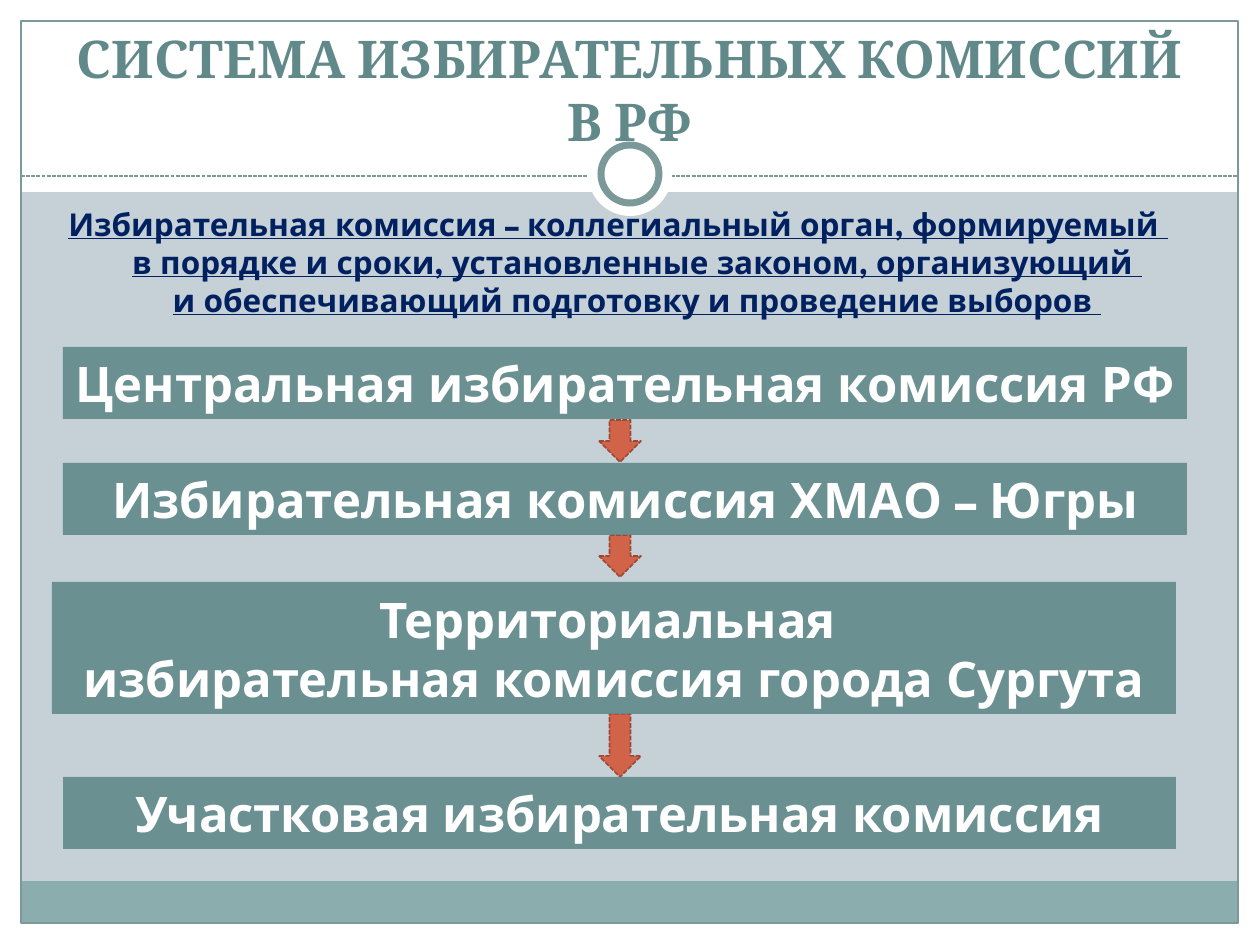
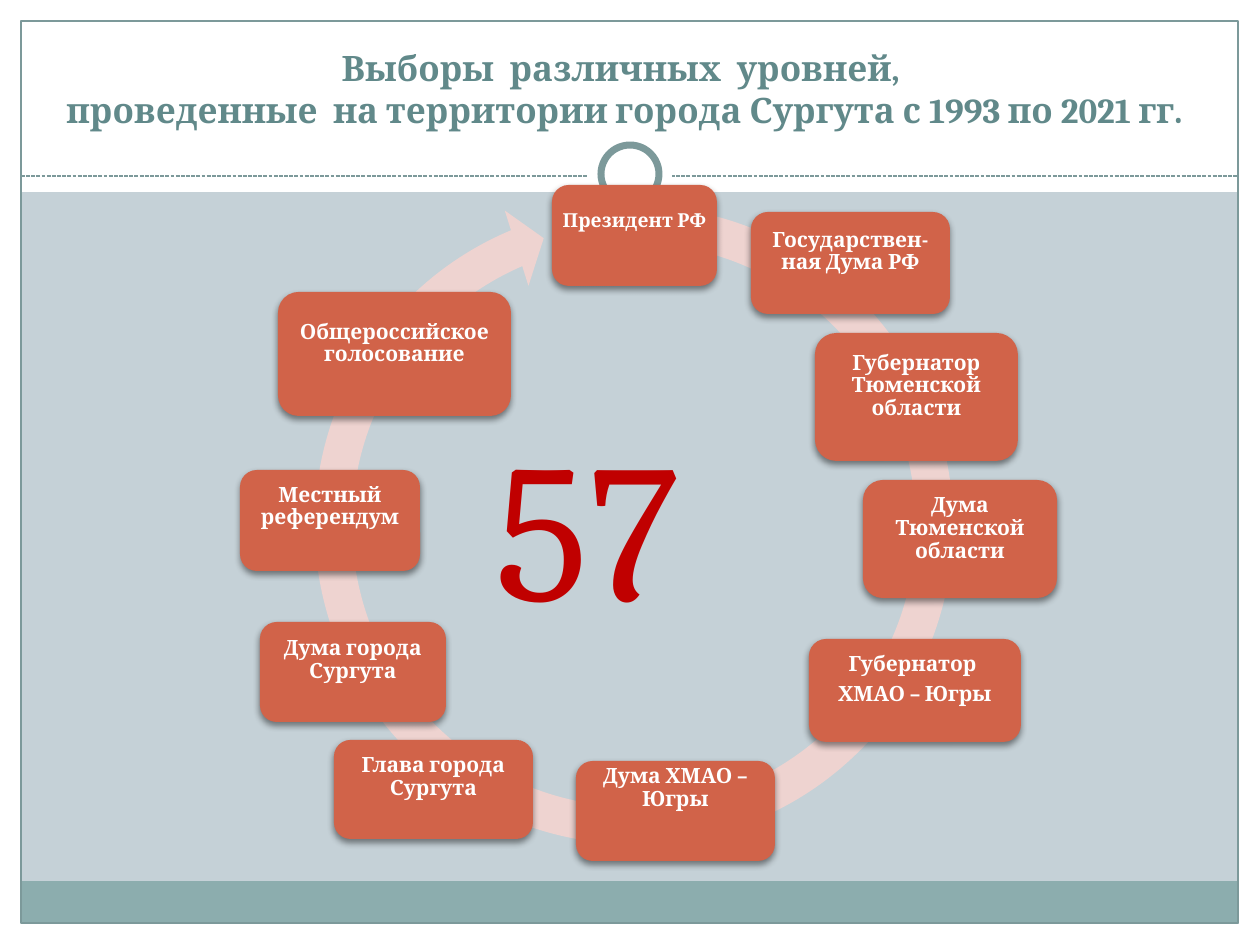
from lxml import etree
from pptx import Presentation
from pptx import util as u
from pptx.dml.color import RGBColor
from pptx.enum import dml, shapes, text
from pptx.oxml.ns import qn

SCALE = 914400 / 126  # EMU in one px
COLOURS = {
    "page": "C5D1D7", "white": "FFFFFF", "band": "8CADAE", "frame": "7C999A",
    "teal": "61898A", "navy": "002060", "rust": "D16349", "rust_edge": "9B4936",
    "ring": "EED3D0", "red": "C00000", "black": "000000",
}
SERIF, SANS = "Cambria", "League Spartan"
KIND = shapes.MSO_SHAPE
CENTRE = text.PP_ALIGN.CENTER


def px(length):
    return u.Emu(round(length * SCALE))


def rgb(name):
    return RGBColor.from_string(COLOURS[name])


def sub(parent, tag, **attributes):
    return etree.SubElement(parent, qn(tag), attributes)


class Deck:
    def __init__(self):
        self.prs = Presentation()
        self.prs.slide_width, self.prs.slide_height = px(1260), px(945)
        self.slide = None

    def new_slide(self, layout):
        self.slide = self.prs.slides.add_slide(self.prs.slide_layouts[layout])

    def shape(self, kind, box, fill=None, line=None, width=0.75, dashed=False):
        item = self.slide.shapes.add_shape(kind, *map(px, box))
        item.shadow.inherit = False
        if fill:
            item.fill.solid()
            item.fill.fore_color.rgb = rgb(fill)
        else:
            item.fill.background()
        if line:
            self.stroke(item.line, line, width, dashed)
        else:
            item.line.fill.background()
        return item

    def stroke(self, line, colour, width, dashed):
        line.color.rgb = rgb(colour)
        line.width = u.Pt(width)
        if dashed:
            line.dash_style = dml.MSO_LINE.SQUARE_DOT

    def rule(self, x1, x2, y, colour):
        line = self.slide.shapes.add_connector(
            shapes.MSO_CONNECTOR.STRAIGHT, px(x1), px(y), px(x2), px(y))
        self.stroke(line.line, colour, 0.75, True)
        sub(line._element.spPr, "a:effectLst")

    def add_words(self, paragraph, lines, size, font, colour, bold=True,
                  underline=None, align=CENTRE):
        paragraph.alignment = align
        for number, line in enumerate(lines.split("\n")):
            if number:
                paragraph.add_line_break()
            run = paragraph.add_run()
            run.text = line
            run.font.size, run.font.name = u.Pt(size), font
            run.font.bold, run.font.underline = bold, underline
            run.font.color.rgb = rgb(colour)

    def place(self, holder, box):
        holder.left, holder.top, holder.width, holder.height = map(px, box)
        holder.text_frame.auto_size = text.MSO_AUTO_SIZE.NONE
        return holder.text_frame

    def title(self, box, words, size):
        frame = self.place(self.slide.shapes.title, box)
        frame.vertical_anchor = text.MSO_ANCHOR.BOTTOM
        self.add_words(frame.paragraphs[0], words, size, SERIF, "teal")

    def definition(self, box, words):
        """Fill the body placeholder with one underlined, unbulleted paragraph."""
        paragraph = self.place(self.slide.placeholders[1], box).paragraphs[0]
        paragraph.space_before = u.Pt(3.6)
        self.add_words(paragraph, words, 18, SANS, "navy", underline=True)
        properties = paragraph._p.get_or_add_pPr()
        properties.set("marL", str(px(38)))
        properties.set("indent", str(px(-38)))
        sub(properties, "a:buNone")

    def level(self, box, words):
        """Draw one level of the hierarchy as a slightly transparent bar."""
        bar = self.shape(KIND.RECTANGLE, box, "teal")
        colour = bar._element.spPr.find(qn("a:solidFill"))[0]
        sub(colour, "a:alpha", val="90000")
        self.add_words(bar.text_frame.paragraphs[0], words, 28, SANS, "white")

    def card(self, box, drop, words, size=12):
        """Draw a shadowed card whose words start drop px below its top."""
        card = self.shape(KIND.ROUNDED_RECTANGLE, box, "rust")
        effects = card._element.spPr.find(qn("a:effectLst"))
        shadow = sub(effects, "a:outerShdw", blurRad=str(u.Pt(4)),
                     dist=str(u.Pt(2)), dir="5400000", rotWithShape="0")
        sub(sub(shadow, "a:srgbClr", val=COLOURS["black"]), "a:alpha", val="45000")
        frame = card.text_frame
        frame.vertical_anchor = text.MSO_ANCHOR.TOP
        frame.margin_left = frame.margin_right = px(5)
        frame.margin_top, frame.margin_bottom = px(max(drop - 5, 0)), 0
        for number, part in enumerate(words):
            paragraph = frame.add_paragraph() if number else frame.paragraphs[0]
            paragraph.line_spacing, paragraph.space_after = 0.9, u.Pt(4.2)
            self.add_words(paragraph, part, size, SERIF, "white")

    def label(self, box, words, size, colour):
        frame = self.slide.shapes.add_textbox(*map(px, box)).text_frame
        frame.word_wrap = True
        self.add_words(frame.paragraphs[0], words, size, SERIF, colour,
                       bold=False, align=text.PP_ALIGN.LEFT)

    def master_frame(self):
        """Draw the common frame on the current slide, then move it to the master."""
        master = self.prs.slide_master
        master.background.fill.solid()
        master.background.fill.fore_color.rgb = rgb("page")
        before = len(self.slide.shapes)
        for box in ((0, 924, 1260, 21), (0, 0, 1260, 192),
                    (0, 0, 21, 945), (1239, 0, 21, 945)):
            self.shape(KIND.RECTANGLE, box, "white")
        self.shape(KIND.RECTANGLE, (21, 881, 1217, 43), "band")
        self.shape(KIND.RECTANGLE, (21, 21, 1217, 902), line="frame")
        self.rule(21, 1239, 176, "frame")
        self.shape(KIND.OVAL, (588, 132, 84, 84), "white")
        self.shape(KIND.OVAL, (601, 145, 58, 58), "white", "frame", 4)
        tree = master.shapes._spTree
        for number, item in enumerate(list(self.slide.shapes)[before:]):
            item._element.xpath(".//p:cNvPr")[0].set("id", str(100 + number))
            tree.insert(2 + number, item._element)


def commissions(deck):
    deck.title((42, 42, 1176, 116), "СИСТЕМА ИЗБИРАТЕЛЬНЫХ КОМИССИЙ В РФ", 29.7)
    deck.definition(
        (32, 199, 1172, 136),
        "Избирательная комиссия – коллегиальный орган, формируемый \n"
        "в порядке и сроки, установленные законом, организующий \n"
        "и обеспечивающий подготовку и проведение выборов ")
    for top, height in ((420, 42), (535, 42), (714, 63)):
        deck.shape(KIND.DOWN_ARROW, (599, top, 42, height),
                   "rust", "rust_edge", 0.9, True)
    for box, words in (
        ((63, 347, 1124, 72), "Центральная избирательная комиссия РФ"),
        ((63, 463, 1124, 72), "Избирательная комиссия ХМАО – Югры"),
        ((52, 582, 1124, 132),
         "Территориальная \nизбирательная комиссия города Сургута"),
        ((63, 777, 1113, 72), "Участковая избирательная комиссия"),
    ):
        deck.level(box, words)


def elections(deck):
    deck.title((21, 21, 1207, 116),
               "Выборы  различных  уровней, \n"
               "проведенные  на территории города Сургута с 1993 по 2021 гг.", 20)
    ring = deck.shape(KIND.CIRCULAR_ARROW, (294, 185, 680, 680), "ring")
    for number, percent in enumerate((5.5, 330.7, 14821.3, 16777.2, 5.8)):
        ring.adjustments[number] = percent / 100
    deck.card((552, 185, 165, 101), 26, ["Президент РФ"], 11)
    for box, drop, *words in (
        ((751, 212, 199, 102), 17, "Государствен-ная Дума РФ"),
        ((815, 333, 203, 128), 18, "Губернатор Тюменской области"),
        ((863, 480, 194, 118), 14, "Дума Тюменской области"),
        ((809, 639, 212, 103), 14, "Губернатор ", "ХМАО – Югры"),
        ((576, 761, 199, 100), 0, "Дума ХМАО – Югры"),
        ((334, 740, 199, 99), 15, "Глава города Сургута"),
        ((260, 622, 186, 100), 16, "Дума города Сургута"),
        ((240, 470, 180, 101), 14, "Местный референдум"),
        ((278, 292, 233, 124), 28, "Общероссийское голосование"),
    ):
        deck.card(box, drop, words)
    deck.label((483, 399, 284, 251), "57", 112, "red")


def main():
    deck = Deck()
    deck.new_slide(1)
    deck.master_frame()
    commissions(deck)
    deck.new_slide(5)
    elections(deck)
    deck.prs.save("out.pptx")


if __name__ == "__main__":
    main()
